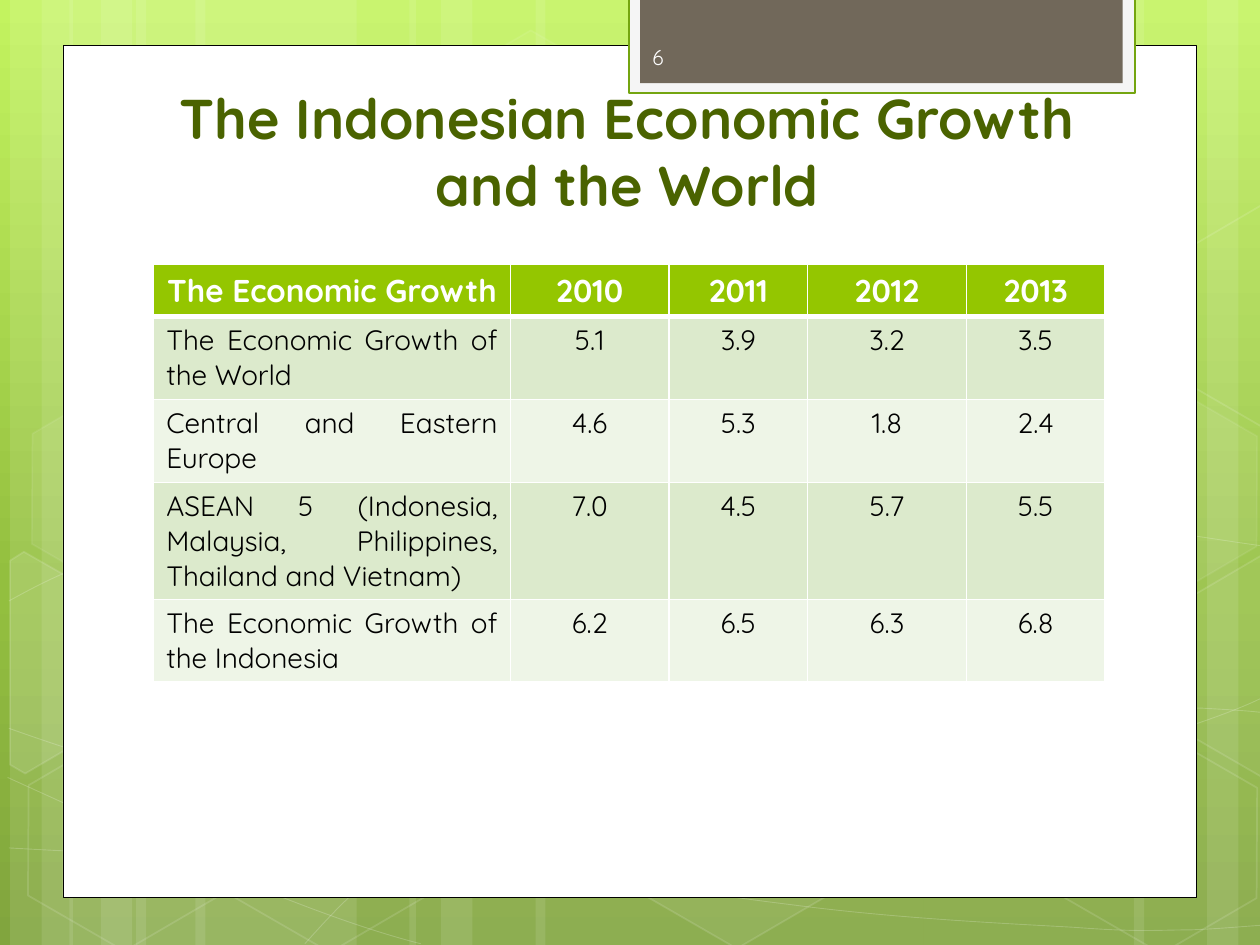
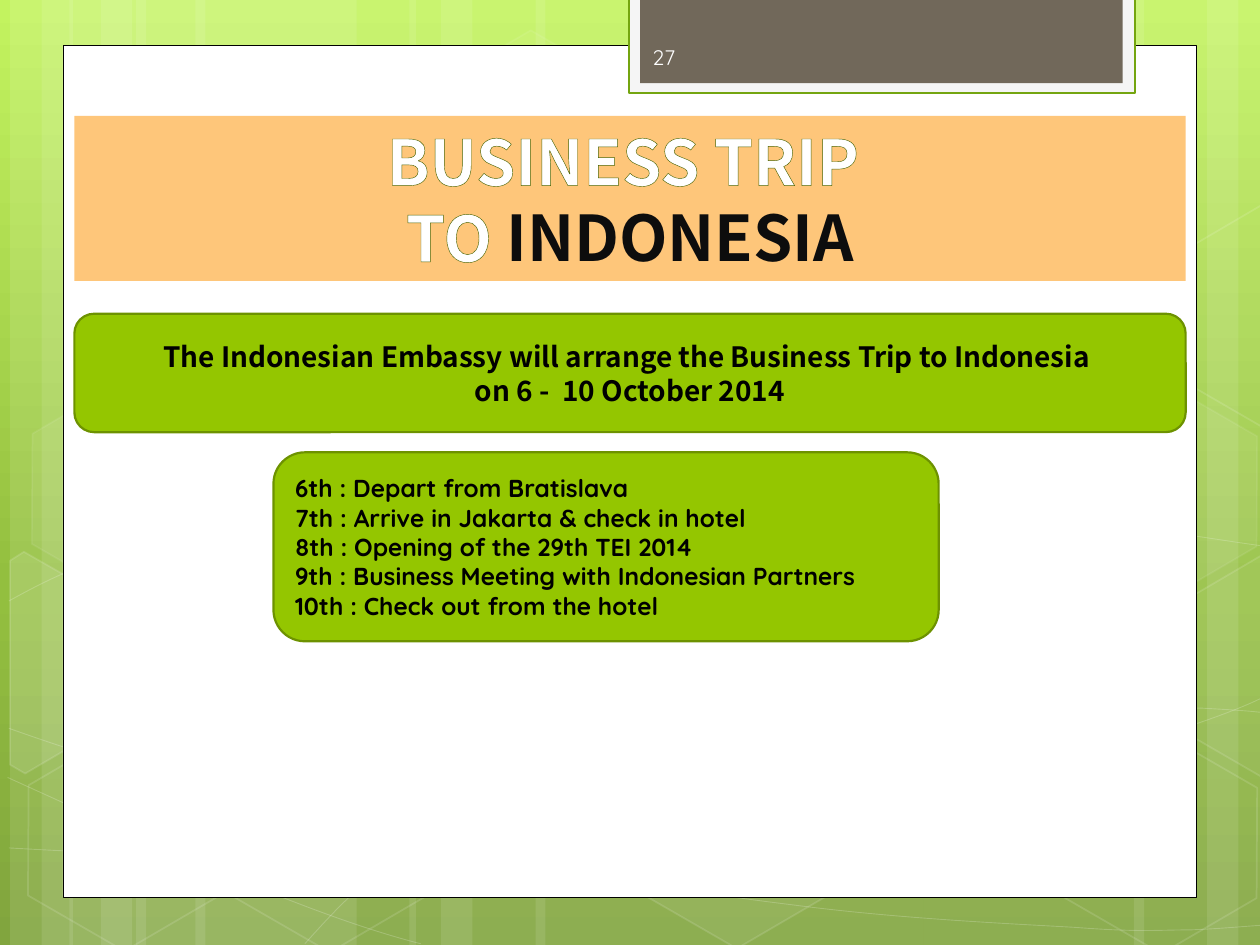
from copy import deepcopy

from lxml.etree import SubElement
from pptx import Presentation
from pptx.dml.color import RGBColor
from pptx.enum.shapes import MSO_SHAPE
from pptx.enum.text import MSO_ANCHOR, PP_ALIGN
from pptx.oxml.ns import qn
from pptx.util import Inches, Pt

WHITE = RGBColor(0xFF, 0xFF, 0xFF)
BLACK = RGBColor(0, 0, 0)
NEAR_BLACK = RGBColor(0x0D, 0x0D, 0x0D)
NUMBER_WHITE = RGBColor(0xFE, 0xFE, 0xFE)
LIME = RGBColor(0x94, 0xC6, 0x00)
LIME_EDGE = RGBColor(0x6D, 0x92, 0x00)
TITLE_GREEN = RGBColor(0x4A, 0x63, 0x00)
TAB_EDGE = RGBColor(0x74, 0xA5, 0x10)
TAB_RIM = RGBColor(0xF5, 0xF5, 0xF5)
TAB_BROWN = RGBColor(0x71, 0x68, 0x5A)
PEACH = RGBColor(0xFE, 0xC6, 0x7A)
GLOW = RGBColor(0xBC, 0xF8, 0x6A)
ROW_TINTS = (RGBColor(0xDC, 0xEA, 0xCC), RGBColor(0xEE, 0xF5, 0xE7))
SKY = (
    (0, RGBColor(0xC3, 0xF3, 0x5F)),
    (0.62, RGBColor(0x93, 0xBF, 0x3F)),
    (1, RGBColor(0x81, 0xA5, 0x3E)),
)

ROUND_FONT = "Quicksand"
PLAIN_FONT = "Noto Sans CJK KR"

STRIPES = (
    (1.08, 1.75), (0.08, 0.5), (0.33, 0.83), (1.55, 1.75), (0.55, 0.5), (0.8, 0.83),
    (7.33, 1.75), (9.58, 0.5), (9, 0.83), (4.25, 3.08), (3.25, 0.5), (3.5, 0.83),
)
WAVES = (
    ((0.07, 6.73), (0.61, 6.76), (1.15, 6.79), (1.9, 6.78), (2.65, 6.77), (3.58, 6.75),
     (4.58, 6.65), (5.58, 6.55), (7, 6.36), (7.92, 6.17), (8.83, 5.98), (9.77, 5.68),
     (10.07, 5.51)),
    ((0.07, 4.77), (0.36, 4.61), (0.65, 4.46), (1.21, 4.31), (1.78, 4.16), (2.59, 3.94),
     (3.47, 3.87), (4.36, 3.8), (5.44, 3.79), (6.54, 3.87), (7.64, 3.95), (9.47, 4.26),
     (10.07, 4.34)),
    ((0.06, 6.17), (1.27, 6.72), (2.47, 7.27), (3.34, 7.49)),
    ((0.07, 5.78), (0.38, 5.89), (0.7, 6), (1.28, 6.16), (1.86, 6.31), (2.73, 6.56),
     (3.57, 6.73), (4.4, 6.9), (5.45, 7.08), (6.28, 7.18), (7.11, 7.29), (8, 7.33),
     (8.53, 7.36), (9.05, 7.4), (9.19, 7.38), (9.45, 7.38), (9.71, 7.37), (9.89, 7.35),
     (10.07, 7.34)),
    ((2.42, 7.49), (2.6, 7.29), (2.78, 7.09), (3.02, 6.91), (3.26, 6.73), (3.6, 6.53),
     (3.88, 6.39), (4.16, 6.25), (4.33, 6.19), (4.7, 6.09), (5.06, 5.99), (5.73, 5.85),
     (6.08, 5.78), (6.44, 5.71), (6.49, 5.71), (6.8, 5.69), (7.11, 5.66), (7.6, 5.63),
     (7.94, 5.62), (8.29, 5.61), (8.86, 5.62), (8.86, 5.62), (9.08, 5.62), (9.31, 5.62),
     (9.53, 5.62), (9.71, 5.63), (9.88, 5.64), (9.97, 5.65), (10.06, 5.66), (10.03, 5.65),
     (10.06, 5.66)),
)
HEXAGONS = (
    (3.34, 0.36, 4, 8), (4.97, 5.89, 6, 12), (0.11, 5.91, 0, 12), (0.14, 3.12, 7, 8),
    (1.74, 5.92, 0, 12), (7.53, 4.53, 10, 12), (8.34, 5.93, 0, 12), (8.34, 3.14, 7, 8),
)
CUT_HEXAGONS = (
    (((0.08, 4.45), (0.19, 4.38), (0.96, 4.82), (0.95, 5.7), (0.2, 6.14), (0.08, 6.07)), 10),
    (((9.26, 4.85), (10.01, 4.41), (10.09, 4.46), (10.09, 6.13), (10.02, 6.17), (9.26, 5.73)), 4),
    (((9.26, 2.07), (10.01, 1.63), (10.1, 1.68), (10.09, 3.35), (10.02, 3.39), (9.26, 2.95)), 0),
)

GROWTH = (
    ("The Economic Growth", "2010", "2011", "2012", "2013"),
    ("The Economic Growth of the World", "5.1", "3.9", "3.2", "3.5"),
    ("Central and Eastern Europe", "4.6", "5.3", "1.8", "2.4"),
    ("ASEAN 5 (Indonesia, Malaysia, Philippines, Thailand and Vietnam)",
     "7.0", "4.5", "5.7", "5.5"),
    ("The Economic Growth of the Indonesia", "6.2", "6.5", "6.3", "6.8"),
)
COLUMN_WIDTHS = (2.83, 1.26, 1.1, 1.26, 1.1)
ROW_HEIGHTS = (0.41, 0.66, 0.66, 0.93, 0.65)
ITINERARY = (
    "6th : Depart from Bratislava",
    "7th : Arrive in Jakarta & check in hotel",
    "8th : Opening of the 29th TEI 2014",
    "9th : Business Meeting with Indonesian Partners",
    "10th : Check out from the hotel",
)


def paint(fill, color, opacity=100):
    """Give a fill one colour at an opacity in percent, or none at zero."""
    if color is None or not opacity:
        fill.background()
        return
    fill.solid()
    fill.fore_color.rgb = color
    if opacity < 100:
        for tone in fill._xPr.find(qn("a:solidFill")):
            SubElement(tone, qn("a:alpha"), val=str(opacity * 1000))


def dress(shape, color, opacity=100, edge=None, weight=1, edge_opacity=100):
    """Set the fill and outline of a shape and drop its shadow."""
    shape.shadow.inherit = False
    paint(shape.fill, color, opacity)
    paint(shape.line.fill, edge, edge_opacity)
    if edge is not None:
        shape.line.width = Pt(weight)
    return shape


def add_panel(slide, box, color, kind=MSO_SHAPE.RECTANGLE, **look):
    """Add a preset shape at a box given in inches."""
    return dress(slide.shapes.add_shape(kind, *map(Inches, box)), color, **look)


def add_outline(slide, points, close, opacity, **look):
    """Add a white freeform through points given in inches."""
    start, *rest = [tuple(map(Inches, point)) for point in points]
    builder = slide.shapes.build_freeform(*start)
    builder.add_line_segments(rest, close=close)
    return dress(builder.convert_to_shape(), WHITE, opacity, edge=WHITE, **look)


def add_wave(slide, knots):
    """Add a thin open line of cubic curves: a start, then two handles and an end each."""
    wave = add_outline(slide, knots, False, 0, weight=0.5, edge_opacity=20)
    segments = list(wave._element.iter(qn("a:lnTo")))
    for first in range(0, len(segments), 3):
        trio = segments[first:first + 3]
        curve = SubElement(trio[0].getparent(), qn("a:cubicBezTo"))
        for segment in trio:
            curve.append(segment[0])
            segment.getparent().remove(segment)


def style_run(run, font, size, color, bold):
    """Set the type of one run."""
    run.font.name = font
    run.font.size = Pt(size)
    run.font.color.rgb = color
    run.font.bold = bold


def write(frame, lines, font, size, color, bold=False, align=PP_ALIGN.LEFT,
          anchor=MSO_ANCHOR.MIDDLE, leading=None):
    """Fill a text frame with one paragraph per line in one style."""
    frame.word_wrap = True
    frame.vertical_anchor = anchor
    frame.text = "\n".join(lines)
    for paragraph in frame.paragraphs:
        paragraph.alignment = align
        if leading:
            paragraph.line_spacing = Pt(leading)
        for run in paragraph.runs:
            style_run(run, font, size, color, bold)


def add_text(slide, box, lines, *style, **layout):
    """Add a text box at a box given in inches."""
    label = slide.shapes.add_textbox(*map(Inches, box))
    write(label.text_frame, lines, *style, **layout)


def outline_run(run, weight, *colors):
    """Draw a gradient outline around the letters of a run."""
    properties = run._r.get_or_add_rPr()
    edge = SubElement(properties, qn("a:ln"), w=str(Pt(weight)))
    gradient = SubElement(edge, qn("a:gradFill"))
    stops = SubElement(gradient, qn("a:gsLst"))
    for place, color in enumerate(colors):
        stop = SubElement(stops, qn("a:gs"), pos=str(100000 * place // (len(colors) - 1)))
        SubElement(stop, qn("a:srgbClr"), val=str(color))
    SubElement(gradient, qn("a:lin"), ang="5400000")
    properties.insert(0, edge)


def border_cell(cell, bottom):
    """Give a cell white borders, with its own bottom weight."""
    properties = cell._tc.get_or_add_tcPr()
    sides = (("a:lnL", 1), ("a:lnR", 1), ("a:lnT", 1), ("a:lnB", bottom))
    for place, (side, weight) in enumerate(sides):
        edge = SubElement(properties, qn(side), w=str(Pt(weight)))
        SubElement(SubElement(edge, qn("a:solidFill")), qn("a:srgbClr"), val=str(WHITE))
        properties.insert(place, edge)


def set_sky(slide):
    """Give the slide its green gradient, light at the top."""
    fill = slide.background.fill
    fill.gradient()
    fill.gradient_angle = 270
    last = fill.gradient_stops[-1]._gs
    last.addprevious(deepcopy(last))
    for stop, (position, color) in zip(fill.gradient_stops, SKY):
        stop.position = position
        stop.color.rgb = color


def add_base(deck, number):
    """Add a slide with the green backdrop, white page and number tab."""
    slide = deck.slides.add_slide(deck.slide_layouts[6])
    set_sky(slide)
    for left, width in STRIPES:
        add_panel(slide, (left, 0, width, 7.5), WHITE, opacity=10)
    for knots in WAVES:
        add_wave(slide, knots)
    for left, top, opacity, edge_opacity in HEXAGONS:
        hexagon = add_panel(slide, (left, top, 1.75, 1.52), WHITE, MSO_SHAPE.HEXAGON,
                            opacity=opacity, edge=WHITE, edge_opacity=edge_opacity)
        hexagon.adjustments[0] = 0.285
        hexagon.rotation = 30
    for corners, opacity in CUT_HEXAGONS:
        add_outline(slide, corners, True, opacity, edge_opacity=12)
    add_panel(slide, (0.5, 0.36, 9, 6.76), WHITE, edge=BLACK, weight=0.5)
    add_panel(slide, (4.99, -0.02, 4.02, 0.76), TAB_RIM, edge=TAB_EDGE, weight=1.25)
    add_panel(slide, (5.08, -0.02, 3.83, 0.68), TAB_BROWN)
    add_text(slide, (5.08, 0.25, 1.46, 0.4), [number], ROUND_FONT, 12, NUMBER_WHITE)
    return slide


def add_growth_table(slide):
    """Add the table of growth rates by region and year."""
    box = (1.22, 2.1, sum(COLUMN_WIDTHS), sum(ROW_HEIGHTS))
    table = slide.shapes.add_table(
        len(GROWTH), len(COLUMN_WIDTHS), *map(Inches, box)).table
    for column, width in zip(table.columns, COLUMN_WIDTHS):
        column.width = Inches(width)
    for r, (row, height) in enumerate(zip(GROWTH, ROW_HEIGHTS)):
        table.rows[r].height = Inches(height)
        header = r == 0
        for c, value in enumerate(row):
            cell = table.cell(r, c)
            paint(cell.fill, LIME if header else ROW_TINTS[(r - 1) % 2])
            border_cell(cell, 3 if header else 1)
            region = c == 0 and not header
            write(cell.text_frame, [value], ROUND_FONT, 18 if header else 16,
                  WHITE if header else BLACK, header,
                  PP_ALIGN.JUSTIFY if region else PP_ALIGN.CENTER, MSO_ANCHOR.TOP)


def add_trip_banner(slide):
    """Add the peach banner with the outlined trip title."""
    banner = add_panel(slide, (0.59, 0.92, 8.82, 1.31), PEACH)
    write(banner.text_frame, ["BUSINESS TRIP ", "TO "], PLAIN_FONT, 36, WHITE, True,
          PP_ALIGN.CENTER, MSO_ANCHOR.TOP, leading=43.5)
    for paragraph in banner.text_frame.paragraphs:
        outline_run(paragraph.runs[0], 2.48, TITLE_GREEN, GLOW)
    country = banner.text_frame.paragraphs[1].add_run()
    country.text = "INDONESIA"
    style_run(country, PLAIN_FONT, 36, NEAR_BLACK, True)


def add_card(slide, box, lines, *style, **layout):
    """Add a rounded lime card with black bold text."""
    card = add_panel(slide, box, LIME, MSO_SHAPE.ROUNDED_RECTANGLE,
                     edge=LIME_EDGE, weight=1.25)
    write(card.text_frame, lines, *style, BLACK, True, **layout)


def main():
    """Build both slides and save the deck."""
    deck = Presentation()
    deck.slide_width, deck.slide_height = Inches(10), Inches(7.5)

    growth = add_base(deck, "6")
    add_text(growth, (1.14, 0.76, 7.68, 1.02),
             ["The Indonesian Economic Growth and the World"], ROUND_FONT, 32,
             TITLE_GREEN, True, PP_ALIGN.CENTER, MSO_ANCHOR.BOTTOM)
    add_growth_table(growth)

    trip = add_base(deck, "27")
    add_card(trip, (0.59, 2.49, 8.82, 0.94),
             ["The Indonesian Embassy will arrange the Business Trip to Indonesia ",
              "on 6 -  10 October 2014"],
             PLAIN_FONT, 16, align=PP_ALIGN.CENTER, leading=19.4)
    add_trip_banner(trip)
    add_card(trip, (2.17, 3.59, 5.28, 1.5), ITINERARY, ROUND_FONT, 14,
             align=PP_ALIGN.JUSTIFY)

    deck.save("out.pptx")


if __name__ == "__main__":
    main()
